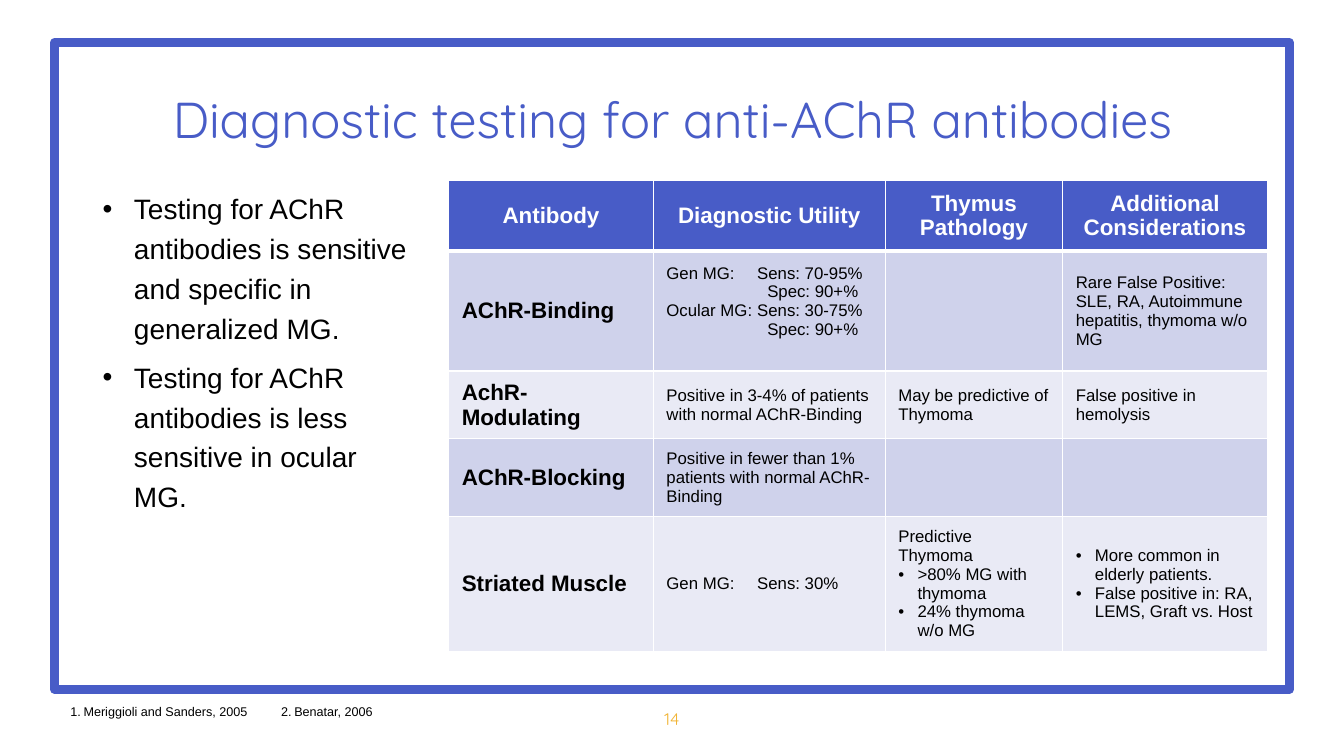
from dataclasses import dataclass

from lxml import etree
from pptx import Presentation
from pptx.dml.color import RGBColor
from pptx.enum.shapes import MSO_SHAPE
from pptx.enum.text import MSO_ANCHOR, PP_ALIGN
from pptx.oxml.ns import qn
from pptx.util import Inches, Pt

RECTANGLE = MSO_SHAPE.RECTANGLE
MIDDLE, TOP = MSO_ANCHOR.MIDDLE, MSO_ANCHOR.TOP
LEFT, CENTER = PP_ALIGN.LEFT, PP_ALIGN.CENTER
TITLE_ONLY = 5


@dataclass(frozen=True)
class Theme:
    blue: str = "485CC7"
    gold: str = "F1B434"
    black: str = "000000"
    white: str = "FFFFFF"
    bands: tuple = ("CFD2EB", "E9EAF5")
    body_font: str = "Arial"
    display_font: str = "Quicksand"
    title_size: int = 36
    body_size: int = 20
    heading_size: int = 16
    cell_size: int = 12
    page_size: int = 12
    note_size: int = 9


@dataclass(frozen=True)
class Line:
    """One paragraph: indent and tab are in inches, number is an automatic number."""
    text: str
    bullet: bool = False
    number: int = 0
    indent: float = 0
    hanging: bool = False
    tab: float = 0


def bullet(text, indent=0.19):
    return Line(text, bullet=True, indent=indent, hanging=True)


POINTS = [
    bullet("Testing for AChR antibodies is sensitive and specific in generalized MG.", 0.31),
    bullet("Testing for AChR antibodies is less sensitive in ocular MG.", 0.31),
]
REFERENCES = ["Meriggioli and Sanders, 2005", "Benatar, 2006"]
SENS_TAB, SPEC_INDENT = 0.9, 1.0
HEADINGS = ["Antibody", "Diagnostic Utility", "Thymus Pathology", "Additional Considerations"]
ANTIBODIES = [
    ("AChR-Binding",
     [Line("Gen MG:\tSens: 70-95%", tab=SENS_TAB),
      Line("Spec: 90+%", indent=SPEC_INDENT),
      Line("Ocular MG:\tSens: 30-75%", tab=SENS_TAB),
      Line("Spec: 90+%", indent=SPEC_INDENT)],
     [],
     [Line("Rare False Positive:"), Line("SLE, RA, Autoimmune hepatitis, thymoma w/o MG")]),
    ("AchR-Modulating",
     [Line("Positive in 3-4% of patients with normal AChR-Binding")],
     [Line("May be predictive of Thymoma")],
     [Line("False positive in hemolysis")]),
    ("AChR-Blocking",
     [Line("Positive in fewer than 1% patients with normal AChR-Binding")],
     [], []),
    ("Striated Muscle",
     [Line("Gen MG:\tSens: 30%", tab=SENS_TAB)],
     [Line("Predictive Thymoma"), bullet(">80% MG with thymoma"), bullet("24% thymoma w/o MG")],
     [bullet("More common in elderly patients."),
      bullet("False positive in: RA, LEMS, Graft vs. Host")]),
]
COLUMN_WIDTHS = [2.03, 2.3, 1.76, 2.03]
ROW_HEIGHTS = [0.7, 1.19, 0.63, 0.77, 1.25]


class SlideBuilder:
    def __init__(self, page, theme):
        self.page = page
        self.theme = theme

    def add_lines(self, frame, lines, size, color=None, font=None, bold=False,
                  align=LEFT, spacing=None, before=0):
        """Fill a text frame with one paragraph for each line."""
        for index, line in enumerate(lines):
            para = frame.paragraphs[0] if index == 0 else frame.add_paragraph()
            self.format_list(para, line)
            para.alignment = align
            if spacing:
                para.line_spacing = spacing
            if index and before:
                para.space_before = Pt(before)
            span = para.add_run()
            span.text = line.text
            span.font.name = font or self.theme.body_font
            span.font.size = Pt(size)
            span.font.bold = bold
            span.font.color.rgb = RGBColor.from_string(color or self.theme.black)

    def format_list(self, para, line):
        """Set the indent, the bullet or number, and the tab stop."""
        props = para._p.get_or_add_pPr()
        if line.indent:
            props.set("marL", str(Inches(line.indent)))
            props.set("indent", str(Inches(-line.indent if line.hanging else 0)))
        if line.bullet:
            etree.SubElement(props, qn("a:buFont"), typeface=self.theme.body_font)
            etree.SubElement(props, qn("a:buChar"), char="•")
        if line.number:
            etree.SubElement(props, qn("a:buAutoNum"), type="arabicPeriod",
                             startAt=str(line.number))
        if line.tab:
            tabs = etree.SubElement(props, qn("a:tabLst"))
            etree.SubElement(tabs, qn("a:tab"), pos=str(Inches(line.tab)), algn="l")

    def frame(self, left, top, width, height):
        box = self.page.shapes.add_shape(
            RECTANGLE, Inches(left), Inches(top), Inches(width), Inches(height))
        box.shadow.inherit = False
        box.fill.background()
        box.line.color.rgb = RGBColor.from_string(self.theme.blue)
        box.line.width = Pt(6)
        etree.SubElement(box.line._get_or_add_ln(), qn("a:round"))

    def title(self, text, left, top, width, height):
        box = self.page.shapes.title
        box.left, box.top = Inches(left), Inches(top)
        box.width, box.height = Inches(width), Inches(height)
        box.text_frame.vertical_anchor = MIDDLE
        self.add_lines(box.text_frame, [Line(text)], self.theme.title_size, self.theme.blue,
                       self.theme.display_font, align=CENTER)

    def text(self, lines, left, top, width, height, size, **style):
        box = self.page.shapes.add_textbox(
            Inches(left), Inches(top), Inches(width), Inches(height))
        box.text_frame.word_wrap = True
        box.text_frame.vertical_anchor = TOP
        self.add_lines(box.text_frame, lines, size, **style)

    def cell(self, cell, lines, fill, bottom_line=1, **style):
        cell.vertical_anchor = MIDDLE
        cell.margin_left = cell.margin_right = Inches(0.13)
        cell.margin_top = cell.margin_bottom = Inches(0.07)
        props = cell._tc.get_or_add_tcPr()
        for side, width in (("L", 1), ("R", 1), ("T", 1), ("B", bottom_line)):
            edge = etree.SubElement(props, qn("a:ln" + side), w=str(Pt(width)))
            paint = etree.SubElement(edge, qn("a:solidFill"))
            etree.SubElement(paint, qn("a:srgbClr"), val=self.theme.white)
        cell.fill.solid()
        cell.fill.fore_color.rgb = RGBColor.from_string(fill)
        self.add_lines(cell.text_frame, lines, **style)

    def table(self, headings, rows, left, top, widths, heights):
        theme = self.theme
        table = self.page.shapes.add_table(
            len(heights), len(widths), Inches(left), Inches(top),
            Inches(sum(widths)), Inches(sum(heights))).table
        for column, width in zip(table.columns, widths):
            column.width = Inches(width)
        for row, height in zip(table.rows, heights):
            row.height = Inches(height)
        for index, heading in enumerate(headings):
            self.cell(table.cell(0, index), [Line(heading)], theme.blue, bottom_line=3,
                      size=theme.heading_size, color=theme.white, bold=True, align=CENTER)
        for number, (name, *details) in enumerate(rows, start=1):
            fill = theme.bands[(number - 1) % 2]
            self.cell(table.cell(number, 0), [Line(name)], fill,
                      size=theme.heading_size, bold=True)
            for index, lines in enumerate(details, start=1):
                self.cell(table.cell(number, index), lines, fill, size=theme.cell_size)
        return table


def main():
    theme = Theme()
    deck = Presentation()
    deck.slide_width, deck.slide_height = Inches(13.33), Inches(7.5)
    page = deck.slides.add_slide(deck.slide_layouts[TITLE_ONLY])
    builder = SlideBuilder(page, theme)

    builder.frame(0.54, 0.42, 12.25, 6.42)
    builder.title("Diagnostic testing for anti-AChR antibodies", 0.92, 0.66, 11.5, 1.02)
    builder.text(POINTS, 0.92, 1.79, 3.32, 3.22, theme.body_size, spacing=1.19, before=6)
    table = builder.table(HEADINGS, ANTIBODIES, 4.45, 1.79, COLUMN_WIDTHS, ROW_HEIGHTS)
    table.cell(1, 1).margin_bottom = Inches(0.26)
    for index, reference in enumerate(REFERENCES):
        note = Line(reference, number=index + 1, indent=0.13, hanging=True)
        builder.text([note], 0.6 + 2.09 * index, 6.93, 2.09, 0.25, theme.note_size)
    builder.text([Line("14")], 5.13, 6.98, 3.07, 0.24, theme.page_size,
                 color=theme.gold, font=theme.display_font, align=CENTER)
    deck.save("out.pptx")


if __name__ == "__main__":
    main()
